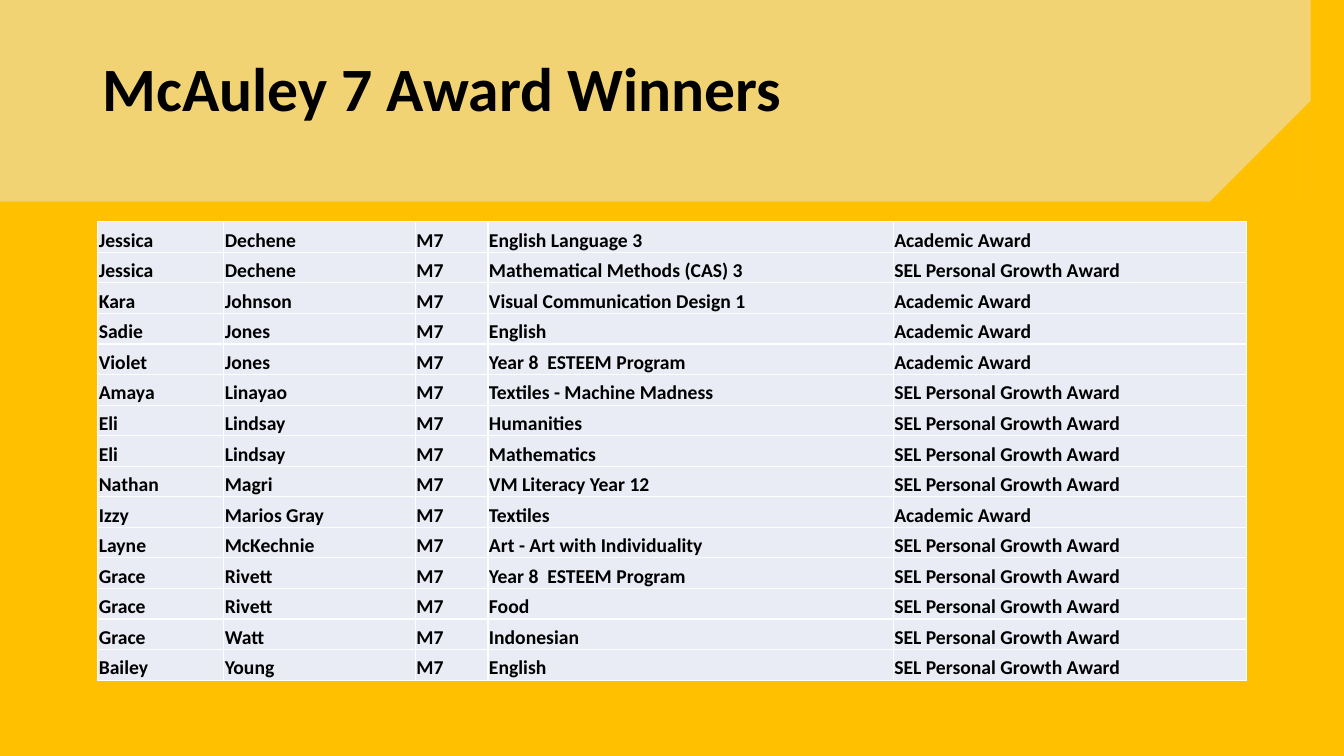
from lxml import etree
from pptx import Presentation
from pptx.dml.color import RGBColor
from pptx.enum.text import MSO_ANCHOR
from pptx.oxml.ns import qn
from pptx.util import Inches, Pt

MIDDLE, BOTTOM = MSO_ANCHOR.MIDDLE, MSO_ANCHOR.BOTTOM

# Content
TITLE = "McAuley 7 Award Winners"
GROUP = "M7"
ACADEMIC, GROWTH = "Academic Award", "SEL Personal Growth Award"
WINNERS = [
    ("Jessica", "Dechene", "English Language 3", ACADEMIC),
    ("Jessica", "Dechene", "Mathematical Methods (CAS) 3", GROWTH),
    ("Kara", "Johnson", "Visual Communication Design 1", ACADEMIC),
    ("Sadie", "Jones", "English", ACADEMIC),
    ("Violet", "Jones", "Year 8  ESTEEM Program", ACADEMIC),
    ("Amaya", "Linayao", "Textiles - Machine Madness", GROWTH),
    ("Eli", "Lindsay", "Humanities", GROWTH),
    ("Eli", "Lindsay", "Mathematics", GROWTH),
    ("Nathan", "Magri", "VM Literacy Year 12", GROWTH),
    ("Izzy", "Marios Gray", "Textiles", ACADEMIC),
    ("Layne", "McKechnie", "Art - Art with Individuality", GROWTH),
    ("Grace", "Rivett", "Year 8  ESTEEM Program", GROWTH),
    ("Grace", "Rivett", "Food", GROWTH),
    ("Grace", "Watt", "Indonesian", GROWTH),
    ("Bailey", "Young", "English", GROWTH),
]

# Ragged banner edge: a slope, then a ridge that is mirrored to the right
SLOPE = [(0, 2.59), (0.46, 2.36), (0.82, 2.21), (1.13, 2.08), (1.2, 2.15),
         (1.5, 2.06), (2, 1.94)]
RIDGE = [(2.39, 1.77), (2.69, 1.58), (3.08, 1.5), (3.25, 1.61), (3.33, 1.51),
         (3.5, 1.6), (3.76, 1.49), (3.97, 1.54), (4.16, 1.65), (4.37, 1.64),
         (4.4, 1.75), (4.6, 1.73), (4.71, 1.96), (5.1, 1.88), (5.35, 1.78),
         (5.68, 1.83), (5.73, 1.92), (5.85, 1.92), (5.87, 2.08), (6.05, 1.97),
         (6.29, 1.91), (6.5, 1.95), (6.57, 2.02), (6.8, 1.94), (7.1, 1.85),
         (7.38, 1.88)]
RIDGE_CENTRE = (7.47, 1.94)

# Theme and layout
THEME = {
    "background": "FFC000", "banner": "E7E6E6", "banner_alpha": 50,
    "cell": "E9EBF5", "border": "FFFFFF", "text": "000000",
    "font": "Calibri", "title_size": 44, "cell_size": 14, "border_width": 1,
}
WIDTH, HEIGHT = 13.33, 7.5
TITLE_BOX = (0.92, 0.4, 11.5, 1.02)
TABLE_LEFT, TABLE_TOP, TABLE_HEIGHT = 0.97, 2.2, 4.55
COLUMNS = (1.25, 1.9, 0.72, 4.02, 3.5)
CURVE_STEPS = 6
CELL_FORMAT = {
    "margin_left": Inches(0.01), "margin_right": Inches(0.01),
    "margin_top": Inches(0.01), "margin_bottom": 0, "vertical_anchor": BOTTOM,
}


def color(name):
    return RGBColor.from_string(THEME[name])


def set_fill(fill, name):
    fill.solid()
    fill.fore_color.rgb = color(name)


def write(p, text, size):
    r = p.add_run()
    r.text = text
    font = {"name": THEME["font"], "size": Pt(THEME[size]), "bold": True}
    for key, value in font.items():
        setattr(r.font, key, value)
    r.font.color.rgb = color("text")


def edge_points():
    centre = RIDGE_CENTRE[0]
    stretch = (WIDTH - centre) / (centre - RIDGE[0][0])
    mirrored = [(centre + (centre - x) * stretch, y) for x, y in reversed(RIDGE)]
    return SLOPE + RIDGE + [RIDGE_CENTRE] + mirrored


def smooth_curve(points):
    """Catmull-Rom curve through the points."""
    padded = [points[0], *points, points[-1]]
    curve = [points[0]]
    for quad in zip(padded, padded[1:], padded[2:], padded[3:]):
        for step in range(1, CURVE_STEPS + 1):
            t = step / CURVE_STEPS
            curve.append(tuple(
                b + t * ((c - a) + t * ((2 * a - 5 * b + 4 * c - d)
                                        + t * (3 * (b - c) + d - a))) / 2
                for a, b, c, d in zip(*quad)))
    return curve


def add_borders(cell):
    tc_pr = cell._tc.get_or_add_tcPr()
    for i, side in enumerate(("lnL", "lnR", "lnT", "lnB")):
        ln = etree.Element(qn(f"a:{side}"), w=str(Pt(THEME["border_width"])))
        solid = etree.SubElement(ln, qn("a:solidFill"))
        etree.SubElement(solid, qn("a:srgbClr"), val=THEME["border"])
        tc_pr.insert(i, ln)


def add_banner(s):
    points = smooth_curve(edge_points()) + [(WIDTH, 0), (0, 0)]
    fb = s.shapes.build_freeform(*points[0], scale=Inches(1))
    fb.add_line_segments(points[1:], close=True)
    sp = fb.convert_to_shape()
    sp.shadow.inherit = False
    sp.line.fill.background()
    set_fill(sp.fill, "banner")
    clr = sp._element.spPr.find(qn("a:solidFill")).find(qn("a:srgbClr"))
    etree.SubElement(clr, qn("a:alpha"), val=str(THEME["banner_alpha"] * 1000))


def add_title(s):
    tf = s.shapes.add_textbox(*map(Inches, TITLE_BOX)).text_frame
    tf.word_wrap = True
    tf.vertical_anchor = MIDDLE
    p = tf.paragraphs[0]
    p.line_spacing = 0.9
    write(p, TITLE, "title_size")


def add_winners(s):
    frame = s.shapes.add_table(len(WINNERS), len(COLUMNS), Inches(TABLE_LEFT),
                               Inches(TABLE_TOP), Inches(sum(COLUMNS)),
                               Inches(TABLE_HEIGHT))
    table = frame.table
    table.first_row = table.horz_banding = False
    for column, width in zip(table.columns, COLUMNS):
        column.width = Inches(width)
    for row, (first, last, subject, award) in zip(table.rows, WINNERS):
        row.height = Inches(TABLE_HEIGHT / len(WINNERS))
        for cell, text in zip(row.cells, (first, last, GROUP, subject, award)):
            for key, value in CELL_FORMAT.items():
                setattr(cell, key, value)
            set_fill(cell.fill, "cell")
            add_borders(cell)
            write(cell.text_frame.paragraphs[0], text, "cell_size")


def main():
    prs = Presentation()
    prs.slide_width, prs.slide_height = Inches(WIDTH), Inches(HEIGHT)
    s = prs.slides.add_slide(prs.slide_layouts[6])
    set_fill(s.background.fill, "background")
    add_banner(s)
    add_title(s)
    add_winners(s)
    prs.save("out.pptx")


if __name__ == "__main__":
    main()
